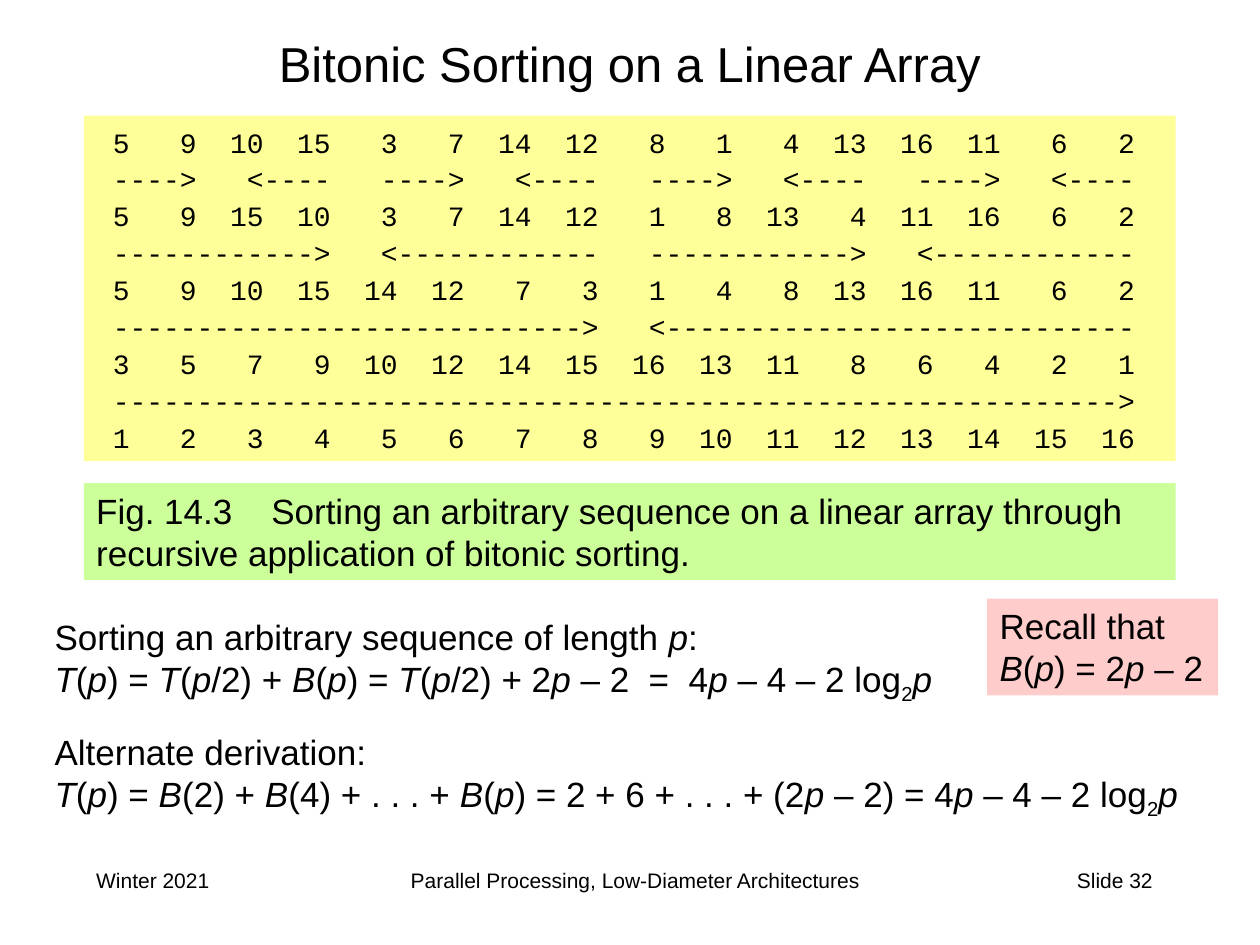
from dataclasses import dataclass
from itertools import groupby
from typing import Optional

from lxml.etree import SubElement
from pptx import Presentation
from pptx.dml.color import RGBColor as RGB
from pptx.enum.shapes import MSO_SHAPE as Shape
from pptx.enum.text import MSO_ANCHOR as Anchor, MSO_AUTO_SIZE as AutoSize, PP_ALIGN as Align
from pptx.oxml.ns import qn
from pptx.util import Cm, Pt


@dataclass(frozen=True)
class Theme:
    text: RGB = RGB(0, 0, 0)
    array: RGB = RGB(0xFF, 0xFF, 0x99)
    caption: RGB = RGB(0xCC, 0xFF, 0x99)
    recall: RGB = RGB(0xFF, 0xCC, 0xCC)
    sans: str = "Arial"
    mono: str = "Courier New"
    title_size: int = 28
    body_size: int = 20
    array_size: int = 16
    footer_size: int = 12


THEME = Theme()
VARIABLES = "TBp"
SUBSCRIPT = "₂"


@dataclass(frozen=True)
class Box:
    left: float
    top: float
    width: float
    height: float
    lines: tuple[str, ...]
    size: int = THEME.body_size
    font: str = THEME.sans
    fill: Optional[RGB] = None
    align: Align = Align.LEFT
    anchor: Anchor = Anchor.TOP
    spacing: float = 1.0
    grow: bool = False
    math: bool = False
    tab: Optional[float] = None


STAGES = (
    (5, 9, 10, 15, 3, 7, 14, 12, 8, 1, 4, 13, 16, 11, 6, 2),
    (5, 9, 15, 10, 3, 7, 14, 12, 1, 8, 13, 4, 11, 16, 6, 2),
    (5, 9, 10, 15, 14, 12, 7, 3, 1, 4, 8, 13, 16, 11, 6, 2),
    (3, 5, 7, 9, 10, 12, 14, 15, 16, 13, 11, 8, 6, 4, 2, 1),
    tuple(range(1, 17)),
)


def number_row(values: tuple[int, ...]) -> str:
    return "  ".join(f"{v:>2}" for v in values)


def arrow_row(group: int, count: int = 16) -> str:
    dashes = "-" * (4 * (group - 1))
    arrows = (dashes + ">", "<" + dashes)
    return " " + "   ".join(arrows[i % 2] for i in range(count // group))


def array_lines() -> tuple[str, ...]:
    lines = [number_row(STAGES[0])]
    for step, values in enumerate(STAGES[1:], 1):
        lines += [arrow_row(2 ** step), number_row(values)]
    return tuple(lines)


def char_style(ch: str) -> str:
    if ch == SUBSCRIPT:
        return "sub"
    return "italic" if ch in VARIABLES else "plain"


def add_runs(p, line: str, math: bool) -> None:
    parts = groupby(line, char_style) if math else [("plain", line)]
    for style, chars in parts:
        r = p.add_run()
        r.text = "".join(chars).replace(SUBSCRIPT, "2")
        if style == "italic":
            r.font.italic = True
        elif style == "sub":
            r.font._element.set("baseline", "-25000")


def add_tab(p, position: float) -> None:
    tabs = SubElement(p._p.get_or_add_pPr(), qn("a:tabLst"))
    SubElement(tabs, qn("a:tab"), pos=str(Cm(position)), algn="l")


def add_box(slide, box: Box) -> None:
    place = [Cm(v) for v in (box.left, box.top, box.width, box.height)]
    if box.fill is None:
        sp = slide.shapes.add_textbox(*place)
    else:
        sp = slide.shapes.add_shape(Shape.RECTANGLE, *place)
        sp.shadow.inherit = False
        sp.fill.solid()
        sp.fill.fore_color.rgb = box.fill
        sp.line.fill.background()
    tf = sp.text_frame
    tf.word_wrap = True
    tf.vertical_anchor = box.anchor
    tf.auto_size = AutoSize.SHAPE_TO_FIT_TEXT if box.grow else AutoSize.NONE
    for i, line in enumerate(box.lines):
        p = tf.paragraphs[0] if i == 0 else tf.add_paragraph()
        p.alignment = box.align
        p.line_spacing = box.spacing
        if box.tab is not None:
            add_tab(p, box.tab)
        add_runs(p, line, box.math)
        for r in p.runs:
            r.font.name = box.font
            r.font.size = Pt(box.size)
            r.font.color.rgb = THEME.text


def footer(left: float, width: float, text: str, align: Align) -> Box:
    return Box(left, 17.36, width, 1.27, (text,), THEME.footer_size, align=align)


BOXES = (
    footer(1.69, 5.29, "Winter 2021", Align.LEFT),
    footer(6.14, 13.34, "Parallel Processing, Low-Diameter Architectures", Align.CENTER),
    footer(18.2, 5.29, "Slide 32", Align.RIGHT),
    Box(1.9, 0.64, 21.59, 1.27, ("Bitonic Sorting on a Linear Array",),
        THEME.title_size, align=Align.CENTER, anchor=Anchor.MIDDLE),
    Box(1.69, 2.33, 22.01, 6.97, array_lines(), THEME.array_size, THEME.mono,
        fill=THEME.array, spacing=1.1, grow=True),
    Box(1.69, 9.74, 22.01, 1.95,
        ("Fig. 14.3\tSorting an arbitrary sequence on a linear array through "
         "recursive application of bitonic sorting.",),
        fill=THEME.caption, grow=True, tab=3.53),
    Box(19.9, 12.07, 4.66, 1.95, ("Recall that", "B(p) = 2p – 2"),
        fill=THEME.recall, grow=True, math=True),
    Box(0.85, 12.28, 18.2, 1.95,
        ("Sorting an arbitrary sequence of length p:",
         "T(p) = T(p/2) + B(p) = T(p/2) + 2p – 2  =  4p – 4 – 2 log₂p"),
        grow=True, math=True),
    Box(0.85, 14.61, 23.5, 1.95,
        ("Alternate derivation:",
         "T(p) = B(2) + B(4) + . . . + B(p) = 2 + 6 + . . . + (2p – 2) = 4p – 4 – 2 log₂p"),
        grow=True, math=True),
)


def main() -> None:
    prs = Presentation()
    prs.slide_width, prs.slide_height = Cm(25.4), Cm(19.05)
    s = prs.slides.add_slide(prs.slide_layouts[6])
    for box in BOXES:
        add_box(s, box)
    prs.save("out.pptx")


if __name__ == "__main__":
    main()
